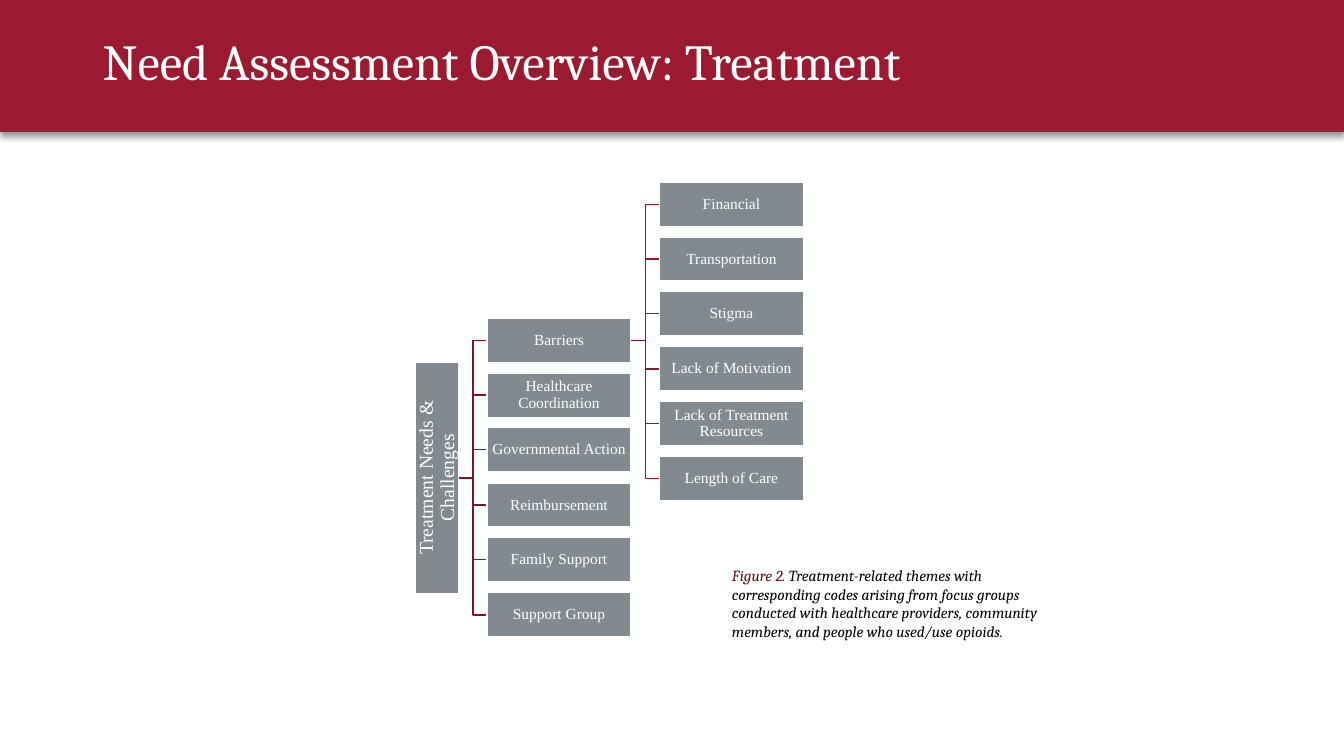
from dataclasses import dataclass

from pptx import Presentation
from pptx.dml.color import RGBColor
from pptx.enum.shapes import MSO_SHAPE
from pptx.enum.text import MSO_ANCHOR, PP_ALIGN
from pptx.oxml import parse_xml
from pptx.oxml.ns import nsdecls
from pptx.shapes.autoshape import Shape
from pptx.slide import Slide
from pptx.util import Emu, Pt

RECT = MSO_SHAPE.RECTANGLE
MIDDLE = MSO_ANCHOR.MIDDLE
CENTER = PP_ALIGN.CENTER

EMU_PER_PX = 9144  # 100 px to the inch
SLIDE_W, SLIDE_H = 1333, 750
NODE_W, NODE_H = 143, 44
COLUMN_SPAN = 272  # first to last node centre
LINK_W = 28
ROOT_LENGTH = 229
ROOT_X, ROOT_Y = 433, 474

HEADING_FONT, NODE_FONT = "Cambria", "Times New Roman"
CRIMSON, OFF_WHITE, WHITE = "9C1932", "FEFFFF", "FFFFFF"
GRAY, MAROON, BLACK = "828A8F", "58101C", "000000"


@dataclass
class Branch:
    parent_right: int
    parent_y: int
    first_y: int
    link_color: str
    labels: list[str]

    @property
    def left(self) -> int:
        return self.parent_right + LINK_W

    def center_y(self, index: int) -> int:
        return self.first_y + COLUMN_SPAN * index // (len(self.labels) - 1)


THEMES = Branch(455, ROOT_Y, 338, "7D1528", [
    "Barriers", "Healthcare Coordination", "Governmental Action",
    "Reimbursement", "Family Support", "Support Group",
])
BARRIERS = Branch(626, 338, 203, "8F182D", [
    "Financial", "Transportation", "Stigma", "Lack of Motivation",
    "Lack of Treatment Resources", "Length of Care",
])


def px(value: int) -> Emu:
    return Emu(value * EMU_PER_PX)


def rgb(color: str) -> RGBColor:
    return RGBColor.from_string(color)


def add_rect(s: Slide, x: int, y: int, w: int, h: int, fill: str) -> Shape:
    sp = s.shapes.add_shape(RECT, px(x), px(y), px(w), px(h))
    sp.shadow.inherit = False
    sp.fill.solid()
    sp.fill.fore_color.rgb = rgb(fill)
    return sp


def add_banner(s: Slide) -> None:
    sp = add_rect(s, 0, 0, SLIDE_W, 131, CRIMSON)
    sp.line.fill.background()
    effects = sp._element.spPr.find(
        "{http://schemas.openxmlformats.org/drawingml/2006/main}effectLst")
    effects.append(parse_xml(
        f'<a:outerShdw {nsdecls("a")} blurRad="{Pt(4)}" dist="{Pt(3)}" '
        f'dir="5400000" rotWithShape="0"><a:srgbClr val="{BLACK}">'
        '<a:alpha val="40000"/></a:srgbClr></a:outerShdw>'))


def add_title(s: Slide, text: str) -> None:
    tf = s.shapes.add_textbox(px(92), px(17), px(1150), px(94)).text_frame
    tf.word_wrap = True
    tf.vertical_anchor = MIDDLE
    p = tf.paragraphs[0]
    p.text = text
    p.line_spacing = 0.9
    p.font.name = HEADING_FONT
    p.font.size = Pt(36)
    p.font.color.rgb = rgb(OFF_WHITE)


def set_margins(sp: Shape, margin: int) -> None:
    tf = sp.text_frame
    tf.margin_left = tf.margin_right = px(margin)
    tf.margin_top = tf.margin_bottom = px(margin)
    tf.word_wrap = True


def add_node(s: Slide, x: int, center_y: int, text: str,
             w: int = NODE_W, size: int = 11) -> Shape:
    sp = add_rect(s, x, center_y - NODE_H // 2, w, NODE_H, GRAY)
    sp.line.color.rgb = rgb(WHITE)
    sp.line.width = Pt(1)
    set_margins(sp, 1)
    sp.text_frame.vertical_anchor = MIDDLE
    p = sp.text_frame.paragraphs[0]
    p.text = text
    p.alignment = CENTER
    p.line_spacing = 0.9
    p.font.name = NODE_FONT
    p.font.size = Pt(size)
    p.font.color.rgb = rgb(WHITE)
    return sp


def add_link(s: Slide, branch: Branch, child_y: int) -> None:
    """Draw the stepped line from the parent's right edge to a child."""
    start, end = branch.parent_right, branch.left
    bend = (start + end) // 2
    builder = s.shapes.build_freeform(start, branch.parent_y, scale=EMU_PER_PX)
    builder.add_line_segments(
        [(bend, branch.parent_y), (bend, child_y), (end, child_y)], close=False)
    sp = builder.convert_to_shape()
    sp.shadow.inherit = False
    sp.fill.background()
    sp.line.color.rgb = rgb(branch.link_color)
    sp.line.width = Pt(1)


def add_branch(s: Slide, branch: Branch) -> None:
    for i, label in enumerate(branch.labels):
        add_link(s, branch, branch.center_y(i))
        add_node(s, branch.left, branch.center_y(i), label)


def add_caption(s: Slide, label: str, text: str) -> None:
    sp = s.shapes.add_textbox(px(726), px(562), px(337), px(74))
    set_margins(sp, 0)
    p = sp.text_frame.paragraphs[0]
    for part, color in ((label, MAROON), (text, BLACK)):
        r = p.add_run()
        r.text = part
        r.font.color.rgb = rgb(color)
    p.font.name = HEADING_FONT
    p.font.size = Pt(11)
    p.font.italic = True


def main() -> None:
    prs = Presentation()
    prs.slide_width, prs.slide_height = px(SLIDE_W), px(SLIDE_H)
    s = prs.slides.add_slide(prs.slide_layouts[6])
    s.background.fill.solid()
    s.background.fill.fore_color.rgb = rgb(OFF_WHITE)

    add_banner(s)
    add_title(s, "Need Assessment Overview: Treatment")
    root = add_node(s, ROOT_X - ROOT_LENGTH // 2, ROOT_Y,
                    "Treatment Needs & Challenges", ROOT_LENGTH, 14)
    root.rotation = 270
    for branch in (THEMES, BARRIERS):
        add_branch(s, branch)
    add_caption(
        s, "Figure 2. ",
        "Treatment-related themes with corresponding codes arising from focus "
        "groups conducted with healthcare providers, community members, and "
        "people who used/use opioids.")
    prs.save("out.pptx")


if __name__ == "__main__":
    main()
